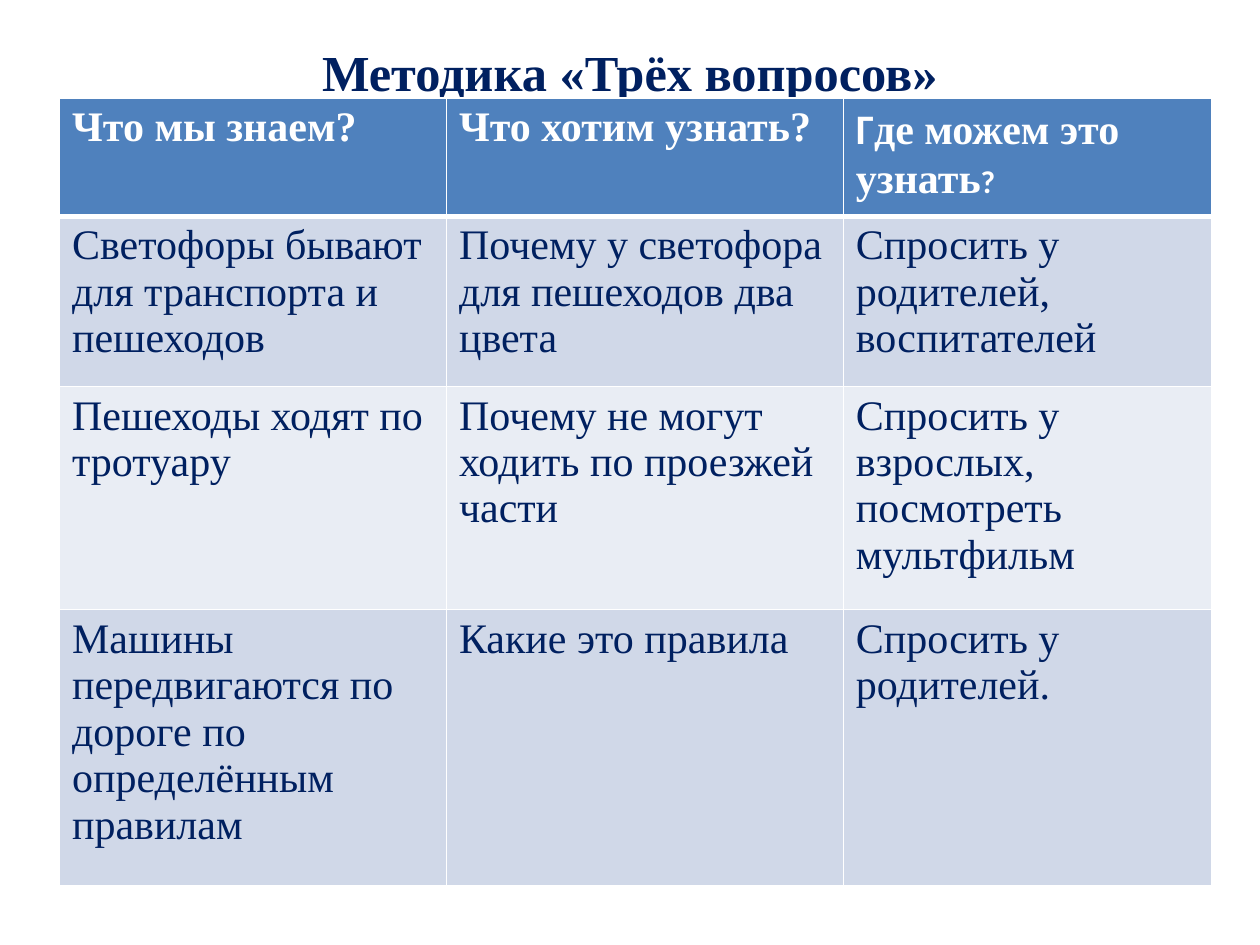
from lxml import etree
from pptx import Presentation
from pptx.dml.color import RGBColor
from pptx.enum.text import MSO_ANCHOR, MSO_AUTO_SIZE, PP_ALIGN
from pptx.oxml.ns import qn
from pptx.util import Cm, Pt

CENTER, BOTTOM, NO_FIT = PP_ALIGN.CENTER, MSO_ANCHOR.BOTTOM, MSO_AUTO_SIZE.NONE

# Content: each cell is a list of runs (text, font, size)
SERIF, SANS = "Times New Roman", "Calibri"
TITLE = "Методика «Трёх вопросов»"
HEADER = [
    [("Что мы знаем?", SERIF, 24)],
    [("Что хотим узнать?", SERIF, 24)],
    [("Г", SANS, 24), ("де можем это узнать", SERIF, 24), ("?", SANS, 18)],
]
BODY = [
    ("Светофоры бывают для транспорта и пешеходов",
     "Почему у светофора для пешеходов два цвета",
     "Спросить у родителей, воспитателей"),
    ("Пешеходы ходят по тротуару",
     "Почему не могут ходить по проезжей части",
     "Спросить у взрослых, посмотреть мультфильм"),
    ("Машины передвигаются по дороге по определённым правилам",
     "Какие это правила",
     "Спросить у родителей."),
]
ROWS = [HEADER] + [[[(text, SERIF, 24)] for text in row] for row in BODY]

COLORS = {"navy": "002060", "white": "FFFFFF", "header": "4F81BD",
          "odd": "D0D8E8", "even": "E9EDF4"}
COL_WIDTHS = [7.8, 8.0, 7.42]
ROW_HEIGHTS = [2.38, 3.43, 4.5, 5.56]


def rgb(name):
    return RGBColor.from_string(COLORS[name])


def style_run(r, font, size, color, bold):
    r.font.name, r.font.size, r.font.bold = font, Pt(size), bold
    r.font.color.rgb = rgb(color)


def add_borders(cell, top, bottom):
    tcPr = cell._tc.get_or_add_tcPr()
    for side, width in (("L", 1), ("R", 1), ("T", top), ("B", bottom)):
        ln = etree.SubElement(tcPr, qn(f"a:ln{side}"), w=str(Pt(width)))
        fill = etree.SubElement(ln, qn("a:solidFill"))
        etree.SubElement(fill, qn("a:srgbClr"), val=COLORS["white"])


prs = Presentation()
prs.slide_width, prs.slide_height = Cm(25.4), Cm(19.05)
s = prs.slides.add_slide(prs.slide_layouts[5])

# Title, rising above its thin box
title = s.shapes.title
title.left, title.top, title.width, title.height = Cm(1.27), Cm(1.78), Cm(22.86), Cm(0.4)
tf = title.text_frame
tf.text = TITLE
tf.auto_size, tf.vertical_anchor = NO_FIT, BOTTOM
p = tf.paragraphs[0]
p.alignment = CENTER
style_run(p.runs[0], SERIF, 28.8, "navy", True)

# Table of the three questions
table = s.shapes.add_table(len(ROWS), len(COL_WIDTHS), Cm(1.2), Cm(1.98),
                           Cm(sum(COL_WIDTHS)), Cm(sum(ROW_HEIGHTS))).table
for column, width in zip(table.columns, COL_WIDTHS):
    column.width = Cm(width)
for i, row in enumerate(ROWS):
    table.rows[i].height = Cm(ROW_HEIGHTS[i])
    is_header = i == 0
    fill = "header" if is_header else "odd" if i % 2 else "even"
    for j, runs in enumerate(row):
        cell = table.cell(i, j)
        add_borders(cell, top=3 if i == 1 else 1, bottom=3 if is_header else 1)
        cell.fill.solid()
        cell.fill.fore_color.rgb = rgb(fill)
        p = cell.text_frame.paragraphs[0]
        for text, font, size in runs:
            r = p.add_run()
            r.text = text
            style_run(r, font, size, "white" if is_header else "navy", is_header)

prs.save("out.pptx")
